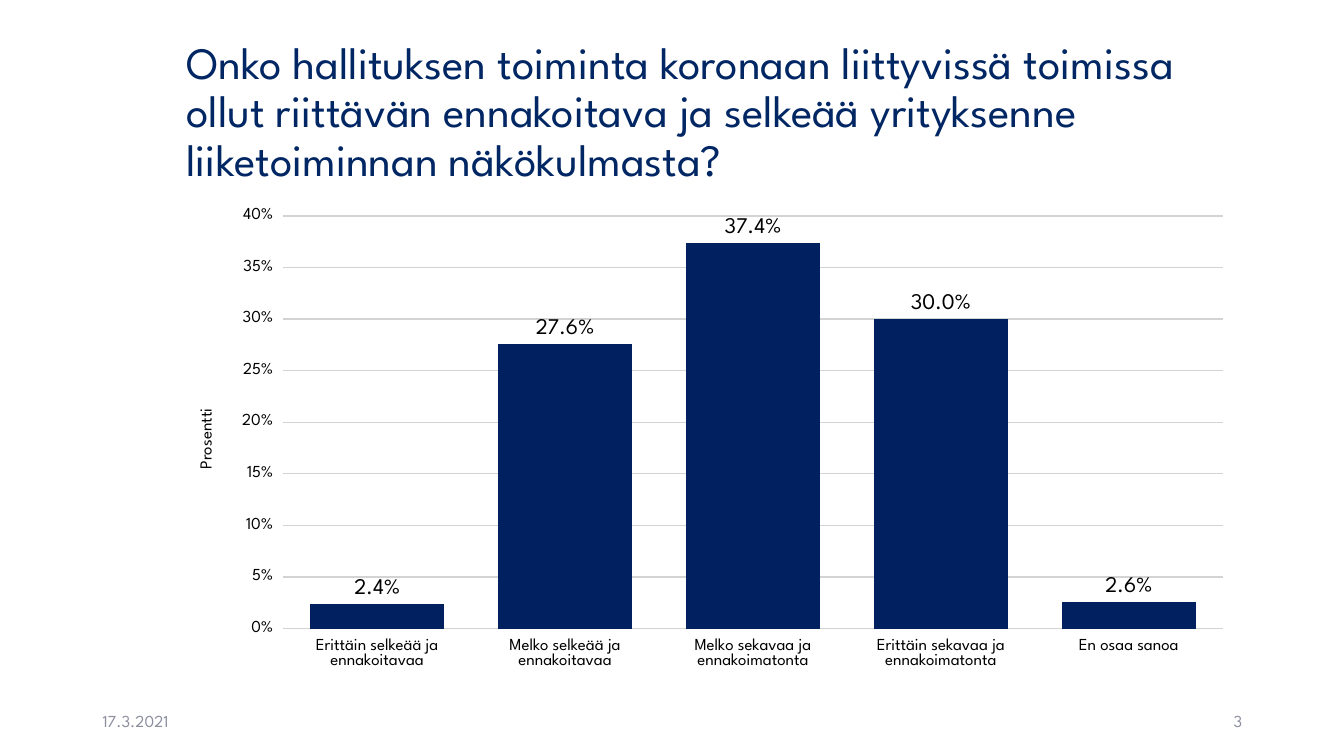
from pptx import Presentation
from pptx.chart.data import CategoryChartData
from pptx.dml.color import RGBColor
from pptx.enum.chart import XL_CHART_TYPE as CT, XL_LABEL_POSITION as LP, XL_TICK_MARK as TM
from pptx.enum.text import MSO_ANCHOR as MA, PP_ALIGN as PA
from pptx.oxml import parse_xml
from pptx.oxml.ns import nsdecls, qn
from pptx.util import Pt

PX = 9144
FONT = "League Spartan"


def rgb(h):
    return RGBColor.from_string(h)


def style(font, size, color):
    for k, v in {"name": FONT, "size": Pt(size), "bold": False}.items():
        setattr(font, k, v)
    font.color.rgb = rgb(color)


prs = Presentation()
prs.slide_width, prs.slide_height = 1333 * PX, 750 * PX
s = prs.slides.add_slide(prs.slide_layouts[6])

title = ("Onko hallituksen toiminta koronaan liittyvissä toimissa ollut riittävän "
         "ennakoitava ja selkeää yrityksenne liiketoiminnan näkökulmasta?")
texts = [
    (title, (175, 40, 1059, 145), 32, "002663", PA.LEFT, 0.9),
    ("17.3.2021", (92, 695, 300, 40), 12, "8C8E9F", PA.LEFT, 1.0),
    ("3", (942, 695, 300, 40), 12, "8C8E9F", PA.RIGHT, 1.0),
]
for text, box, size, color, align, spacing in texts:
    sp = s.shapes.add_textbox(*(v * PX for v in box))
    tf = sp.text_frame
    tf.word_wrap, tf.vertical_anchor = True, MA.MIDDLE
    p = tf.paragraphs[0]
    p.alignment, p.line_spacing = align, spacing
    r = p.add_run()
    r.text = text
    style(r.font, size, color)

data = CategoryChartData()
data.categories = [
    "Erittäin selkeää ja ennakoitavaa",
    "Melko selkeää ja ennakoitavaa",
    "Melko sekavaa ja ennakoimatonta",
    "Erittäin sekavaa ja ennakoimatonta",
    "En osaa sanoa",
]
data.add_series("Prosentti", (0.024, 0.276, 0.374, 0.3, 0.026))
box = (175, 200, 1059, 476)
chart = s.shapes.add_chart(CT.COLUMN_CLUSTERED, *(v * PX for v in box), data).chart
chart.has_legend = chart.has_title = False
style(chart.font, 11, "000000")

plot = chart.plots[0]
plot.gap_width, plot.vary_by_categories = 40, False
fill = plot.series[0].format.fill
fill.solid()
fill.fore_color.rgb = rgb("002060")
plot.has_data_labels = True
labels = plot.data_labels
for k, v in {"show_value": True, "position": LP.OUTSIDE_END,
             "number_format": "0.0%", "number_format_is_linked": False}.items():
    setattr(labels, k, v)
style(labels.font, 16, "000000")

cat, val = chart.category_axis, chart.value_axis
for axis in (cat, val):
    axis.major_tick_mark, axis.minor_tick_mark = TM.OUTSIDE, TM.NONE
    axis.format.line.fill.background()
    style(axis.tick_labels.font, 12, "000000")
for k, v in {"minimum_scale": 0, "maximum_scale": 0.4, "major_unit": 0.05,
             "has_major_gridlines": True}.items():
    setattr(val, k, v)
val.tick_labels.number_format = "0%"
val.tick_labels.number_format_is_linked = False
grid = val.major_gridlines.format.line
grid.width = Pt(1)
grid.color.rgb = rgb("D3D3D3")
p = val.axis_title.text_frame.paragraphs[0]
r = p.add_run()
r.text = "Prosentti"
style(r.font, 12, "000000")

area = chart._chartSpace.chart.plotArea
for old in area.findall(qn("c:layout")):
    area.remove(old)
frame = {"x": 0.1, "y": 0.03, "w": 0.88, "h": 0.86}
edges = "".join(f'<c:{k} val="{v}"/>' for k, v in frame.items())
area.insert(0, parse_xml(
    f'<c:layout {nsdecls("c")}><c:manualLayout><c:layoutTarget val="inner"/>'
    f'<c:xMode val="edge"/><c:yMode val="edge"/>{edges}</c:manualLayout></c:layout>'))

prs.save("out.pptx")
